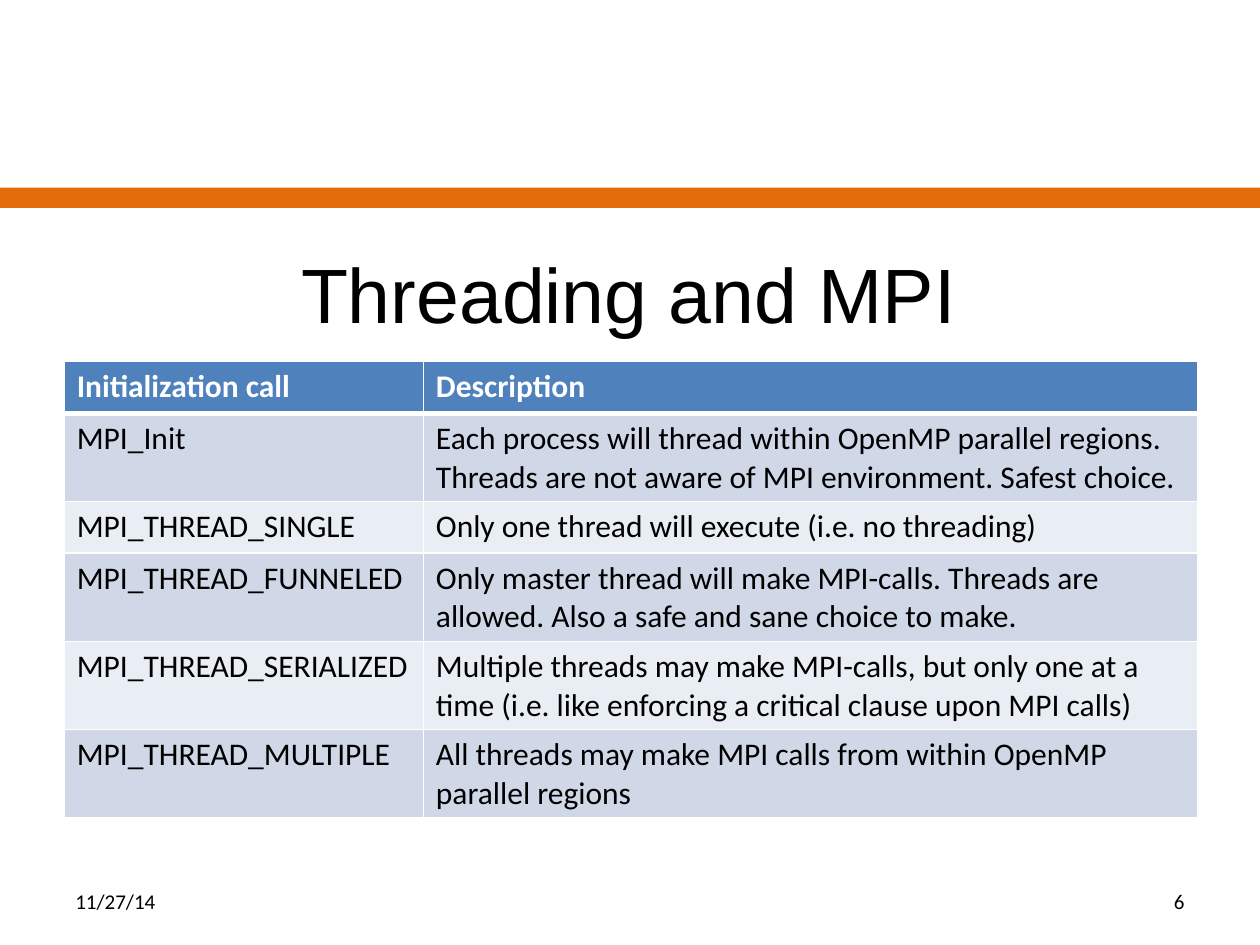
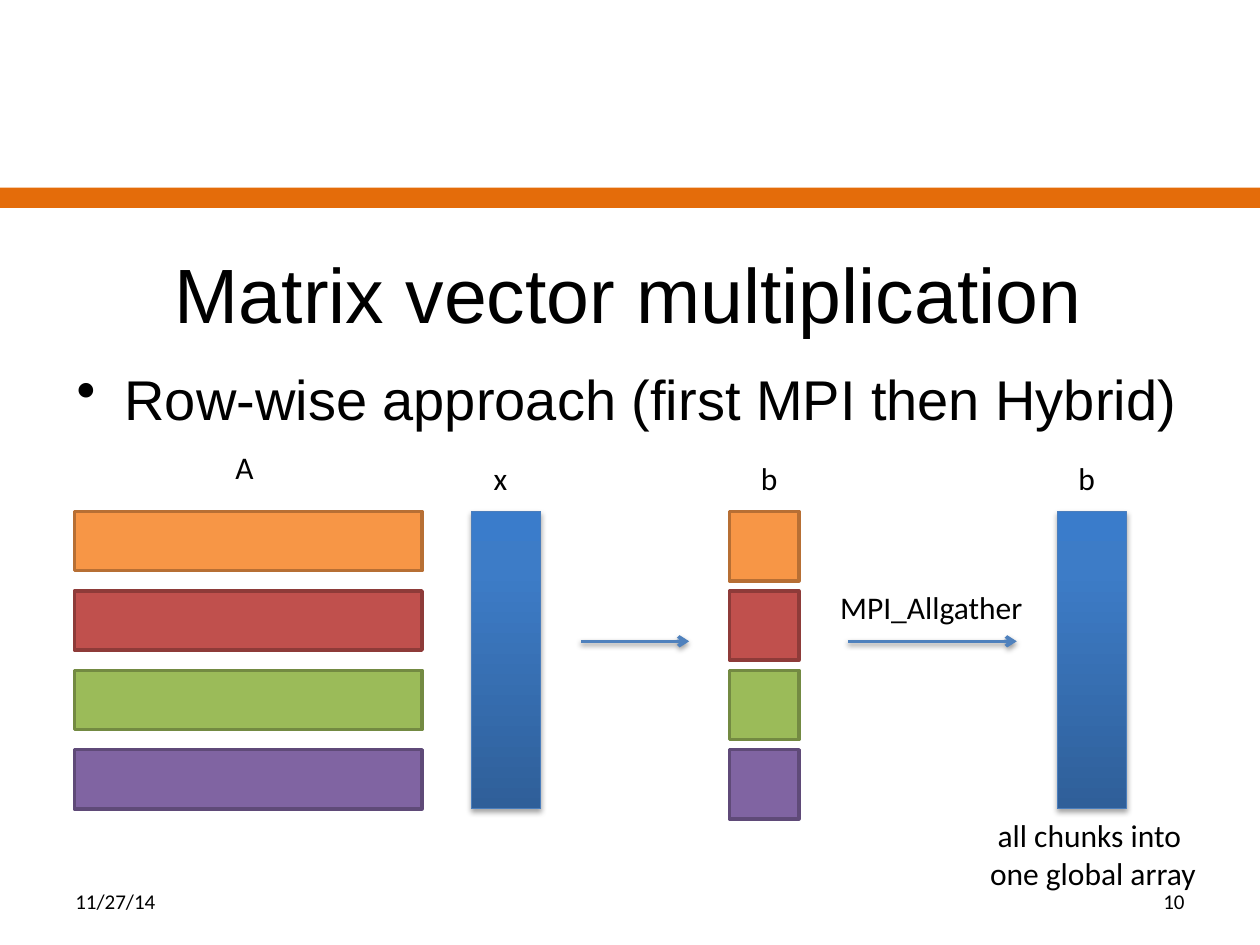
import copy

import lxml.etree
import pptx
import pptx.dml.color
import pptx.enum.shapes
import pptx.enum.text
import pptx.oxml
import pptx.oxml.ns
import pptx.util

RGB = pptx.dml.color.RGBColor
Pt = pptx.util.Pt
qn = pptx.oxml.ns.qn
Align = pptx.enum.text.PP_ALIGN
Anchor = pptx.enum.text.MSO_ANCHOR

EMU_PER_PX = 9144  # 100 px to the inch
SLIDE_WIDTH, SLIDE_HEIGHT = 1000, 750

BLACK = RGB(0x00, 0x00, 0x00)
WHITE = RGB(0xFF, 0xFF, 0xFF)
BAND_ORANGE = RGB(0xE4, 0x6C, 0x0A)
HEADER_BLUE = RGB(0x4F, 0x81, 0xBD)
ROW_DARK = RGB(0xD0, 0xD8, 0xE8)
ROW_LIGHT = RGB(0xE9, 0xED, 0xF4)
VECTOR_EDGE = RGB(0x4B, 0x7E, 0xBC)
VECTOR_STOPS = [
    (0, RGB(0x2F, 0x5F, 0x99)),
    (0.8, RGB(0x3D, 0x7C, 0xC7)),
    (1, RGB(0x3A, 0x7C, 0xCB)),
]
CHUNK_COLOURS = [  # fill and edge of each process's chunk
    (RGB(0xF7, 0x96, 0x46), RGB(0xB7, 0x6F, 0x34)),
    (RGB(0xC0, 0x50, 0x4D), RGB(0x8E, 0x3B, 0x39)),
    (RGB(0x9B, 0xBB, 0x59), RGB(0x73, 0x8A, 0x42)),
    (RGB(0x80, 0x64, 0xA2), RGB(0x5F, 0x4A, 0x78)),
]

HEADING_FONT = "Arial"
TEXT_FONT = "Calibri"
DATE = "11/27/14"

THREADING_ROWS = [
    ("Initialization call", "Description"),
    ("MPI_Init", "Each process will thread within OpenMP parallel regions. "
                 "Threads are not aware of MPI environment. Safest choice."),
    ("MPI_THREAD_SINGLE", "Only one thread will execute (i.e. no threading)"),
    ("MPI_THREAD_FUNNELED", "Only master thread will make MPI-calls. Threads are allowed. "
                            "Also a safe and sane choice to make."),
    ("MPI_THREAD_SERIALIZED", "Multiple threads may make MPI-calls, but only one at a time "
                              "(i.e. like enforcing a critical clause upon MPI calls)"),
    ("MPI_THREAD_MULTIPLE", "All threads may make MPI calls from within OpenMP parallel regions"),
]


def px(length):
    return pptx.util.Emu(length * EMU_PER_PX)


def set_font(paragraph, size, name=TEXT_FONT, colour=BLACK, bold=False):
    font = paragraph.font
    font.size, font.name, font.bold = Pt(size), name, bold
    font.color.rgb = colour


def set_shadow(shape, opacity=0, distance=0):
    """Give the shape a soft shadow below it, or none when opacity is 0.

    Call after fill and line are set, as effects follow them in the XML.
    """
    effects = lxml.etree.SubElement(shape._element.spPr, qn("a:effectLst"))
    if opacity:
        shadow = lxml.etree.SubElement(
            effects, qn("a:outerShdw"), blurRad=str(Pt(3.1)), dist=str(Pt(distance)),
            dir="5400000", rotWithShape="0")
        colour = lxml.etree.SubElement(shadow, qn("a:srgbClr"), val=str(BLACK))
        lxml.etree.SubElement(colour, qn("a:alpha"), val=str(opacity * 1000))


def set_borders(cell, **widths):
    """Draw white borders; widths in points are keyed L, R, T and B."""
    properties = cell._tc.get_or_add_tcPr()
    for side, width in widths.items():
        line = lxml.etree.SubElement(properties, qn(f"a:ln{side}"), w=str(Pt(width)))
        fill = lxml.etree.SubElement(line, qn("a:solidFill"))
        lxml.etree.SubElement(fill, qn("a:srgbClr"), val=str(WHITE))


class Deck:
    def __init__(self):
        self.presentation = pptx.Presentation()
        self.presentation.slide_width = px(SLIDE_WIDTH)
        self.presentation.slide_height = px(SLIDE_HEIGHT)
        self.slide = None

    def new_slide(self, title, number):
        self.slide = self.presentation.slides.add_slide(self.presentation.slide_layouts[5])
        self.rectangle(0, 149, SLIDE_WIDTH, 16, BAND_ORANGE)
        heading = self.slide.shapes.title
        heading.left, heading.top, heading.width, heading.height = map(px, (49, 170, 900, 125))
        frame = heading.text_frame
        frame.text = title
        frame.auto_size = pptx.enum.text.MSO_AUTO_SIZE.NONE
        frame.vertical_anchor = Anchor.MIDDLE
        frame.paragraphs[0].alignment = Align.CENTER
        set_font(frame.paragraphs[0], 44, HEADING_FONT)
        for left, text, align in ((50, DATE, Align.LEFT), (717, number, Align.RIGHT)):
            footer = self.text(left, 695, 233, 40, text, size=12, wrap=True)
            footer.vertical_anchor = Anchor.MIDDLE
            footer.paragraphs[0].alignment = align

    def text(self, left, top, width, height, text, size=18, font=TEXT_FONT, wrap=False):
        box = self.slide.shapes.add_textbox(px(left), px(top), px(width), px(height))
        frame = box.text_frame
        frame.word_wrap = wrap
        frame.text = text
        for paragraph in frame.paragraphs:
            set_font(paragraph, size, font)
        return frame

    def bullet(self, left, top, width, height, text):
        frame = self.text(left, top, width, height, "", wrap=True)
        paragraph = frame.paragraphs[0]
        properties = paragraph._p.get_or_add_pPr()
        properties.set("marL", str(px(38)))
        properties.set("indent", str(px(-38)))
        properties.insert(0, properties.makeelement(qn("a:buChar"), {"char": "•"}))
        paragraph.text = text
        set_font(paragraph, 32, HEADING_FONT)

    def rectangle(self, left, top, width, height, fill, edge=None):
        shape = self._box(left, top, width, height)
        shape.fill.solid()
        shape.fill.fore_color.rgb = fill
        if edge is None:
            shape.line.fill.background()
        else:
            shape.line.color.rgb = edge
            shape.line.width = Pt(2)
        set_shadow(shape)

    def vector(self, left, top, width, height):
        """Draw a whole vector as a tall bar, shaded from dark at its foot."""
        shape = self._box(left, top, width, height)
        shape.fill.gradient()
        shape.fill.gradient_angle = 90
        stop_list = shape._element.spPr.find(".//" + qn("a:gsLst"))
        stop_list.append(copy.deepcopy(stop_list[-1]))
        for stop, (position, colour) in zip(shape.fill.gradient_stops, VECTOR_STOPS):
            stop.position = position
            stop.color.rgb = colour
        shape.line.color.rgb = VECTOR_EDGE
        shape.line.width = Pt(0.75)
        set_shadow(shape, 35, 1.8)

    def _box(self, left, top, width, height):
        return self.slide.shapes.add_shape(
            pptx.enum.shapes.MSO_SHAPE.RECTANGLE, px(left), px(top), px(width), px(height))

    def arrow(self, start, end, y):
        arrow = self.slide.shapes.add_connector(
            pptx.enum.shapes.MSO_CONNECTOR.STRAIGHT, px(start), px(y), px(end), px(y))
        arrow.line.color.rgb = HEADER_BLUE
        arrow.line.width = Pt(2)
        lxml.etree.SubElement(arrow.line._get_or_add_ln(), qn("a:tailEnd"), type="arrow")
        set_shadow(arrow, 38, 1.6)

    def table(self, left, top, column_widths, row_height, rows):
        table = self.slide.shapes.add_table(
            len(rows), len(column_widths), px(left), px(top),
            px(sum(column_widths)), px(row_height * len(rows))).table
        for column, width in zip(table.columns, column_widths):
            column.width = px(width)
        for r, texts in enumerate(rows):
            table.rows[r].height = px(row_height)
            header = r == 0
            for c, text in enumerate(texts):
                cell = table.cell(r, c)
                cell.text = text
                set_font(cell.text_frame.paragraphs[0], 18,
                         colour=WHITE if header else BLACK, bold=header)
                set_borders(cell, L=1, R=1, T=3 if r == 1 else 1, B=3 if header else 1)
                cell.fill.solid()
                cell.fill.fore_color.rgb = (
                    HEADER_BLUE if header else ROW_DARK if r % 2 else ROW_LIGHT)


def build_threading(deck):
    deck.new_slide("Threading and MPI", "6")
    deck.table(51, 287, (285, 615), 41, THREADING_ROWS)


def build_multiplication(deck):
    deck.new_slide("Matrix vector multiplication", "10")
    deck.bullet(51, 284, 900, 60, "Row-wise approach (first MPI then Hybrid)")

    top, pitch, thickness, vector_height = 406, 63, 55, 236
    for row, (fill, edge) in enumerate(CHUNK_COLOURS):
        chunk_top = top + row * pitch
        deck.rectangle(59, chunk_top, 276, 47, fill, edge)
        deck.rectangle(579, chunk_top, thickness, thickness, fill, edge)
    for left in (374, 839):
        deck.vector(left, top, thickness, vector_height)
    for start, end in ((461, 547), (673, 807)):
        deck.arrow(start, end, 509)

    for left, label_top, width, label in (
        (177, 351, 35, "A"),
        (382, 359, 31, "x"),
        (594, 359, 33, "b"),
        (846, 359, 33, "b"),
        (657, 462, 167, "MPI_Allgather"),
    ):
        deck.text(left, label_top, width, 40, label)
    result = deck.text(776, 643, 186, 71, "all chunks into\none global array")
    result.paragraphs[0]._p.get_or_add_pPr().set("marL", str(px(6)))


def main():
    deck = Deck()
    build_threading(deck)
    build_multiplication(deck)
    deck.presentation.save("out.pptx")


if __name__ == "__main__":
    main()
